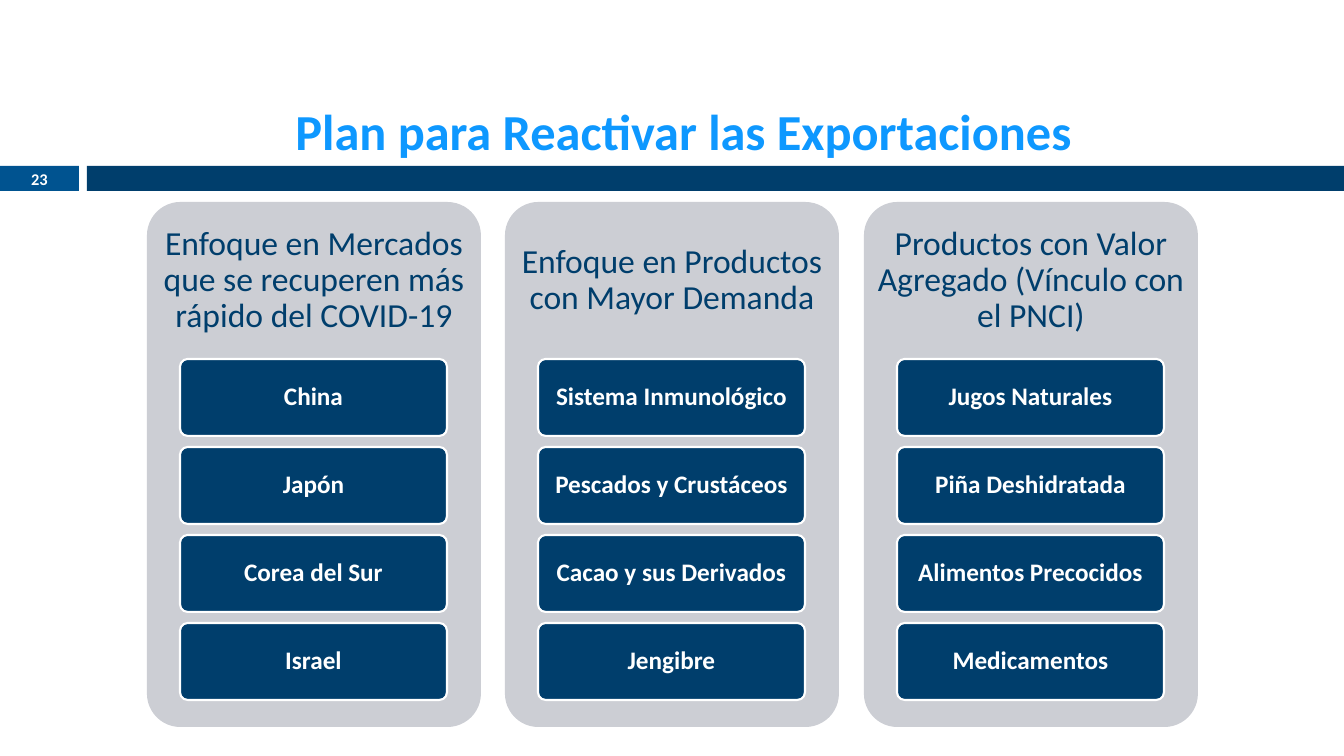
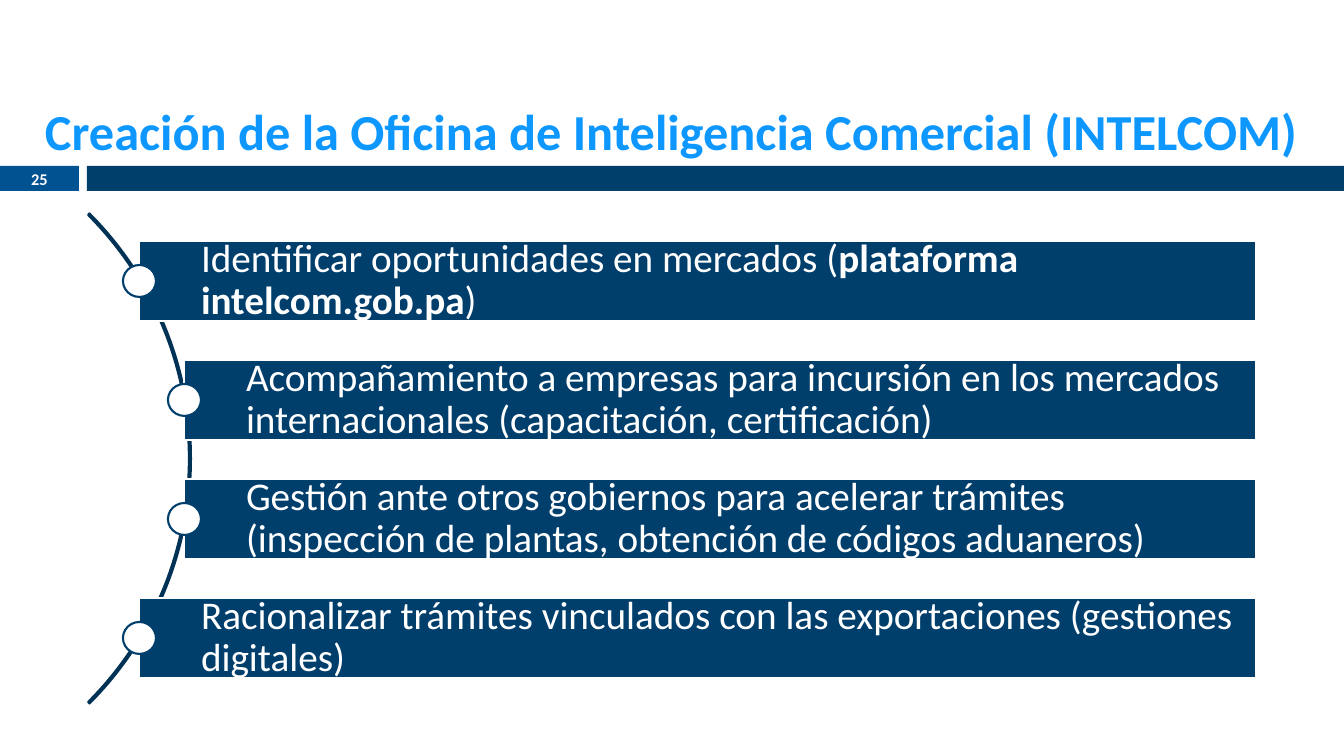
from dataclasses import dataclass

from pptx import Presentation
from pptx import util as u
from pptx.dml.color import RGBColor
from pptx.enum import shapes, text

WIDE, HIGH = 1344, 756
SCALE = 12192000 / WIDE
FONT = "Calibri"
HUES = {
    "title": "0E98FF",
    "navy": "003E6C",
    "blue": "005390",
    "arc": "003256",
    "card": "CCCED4",
    "white": "FFFFFF",
}
KIND = shapes.MSO_SHAPE
MID = text.MSO_ANCHOR.MIDDLE
LEFT, CENTER = text.PP_ALIGN.LEFT, text.PP_ALIGN.CENTER


@dataclass
class Box:
    x: int
    y: int
    w: int
    h: int

    def emu(self) -> list[u.Emu]:
        return [px(n) for n in (self.x, self.y, self.w, self.h)]


@dataclass
class Card:
    head: str
    items: list[str]


@dataclass
class Bar:
    left: int
    words: list[str]  # every second piece is bold


CARDS = [
    Card("Enfoque en Mercados que se recuperen más rápido del COVID-19",
         ["China", "Japón", "Corea del Sur", "Israel"]),
    Card("Enfoque en Productos con Mayor Demanda",
         ["Sistema Inmunológico", "Pescados y Crustáceos",
          "Cacao y sus Derivados", "Jengibre"]),
    Card("Productos con Valor Agregado (Vínculo con el PNCI)",
         ["Jugos Naturales", "Piña Deshidratada",
          "Alimentos Precocidos", "Medicamentos"]),
]
BARS = [
    Bar(139, ["Identificar oportunidades en mercados (",
              "plataforma intelcom.gob.pa", ")"]),
    Bar(184, ["Acompañamiento a empresas para incursión en los mercados "
              "internacionales (capacitación, certificación)"]),
    Bar(184, ["Gestión ante otros gobiernos para acelerar trámites "
              "(inspección de plantas, obtención de códigos aduaneros)"]),
    Bar(139, ["Racionalizar trámites vinculados con las exportaciones "
              "(gestiones digitales)"]),
]


def px(n: int) -> u.Emu:
    return u.Emu(round(n * SCALE))


def rgb(hue: str) -> RGBColor:
    return RGBColor.from_string(HUES[hue])


def shape(slide, kind, box: Box, fill: str = "", line: str = ""):
    item = slide.shapes.add_shape(kind, *box.emu())
    item.shadow.inherit = False
    if fill:
        item.fill.solid()
        item.fill.fore_color.rgb = rgb(fill)
    else:
        item.fill.background()
    if line:
        item.line.color.rgb = rgb(line)
        item.line.width = u.Pt(1.5)
    else:
        item.line.fill.background()
    return item


def write(item, words: list[str], size: float, hue: str, bold: bool = False,
          align=CENTER, anchor=MID, space: float = 1.0,
          pad: tuple[int, int, int, int] = (10, 5, 10, 5)) -> None:
    """Fill one paragraph; every second piece switches the weight."""
    frame = item.text_frame
    frame.word_wrap = True
    frame.vertical_anchor = anchor
    (frame.margin_left, frame.margin_top,
     frame.margin_right, frame.margin_bottom) = map(px, pad)
    para = frame.paragraphs[0]
    para.alignment = align
    para.line_spacing = space
    for i, word in enumerate(words):
        run = para.add_run()
        run.text = word
        run.font.name = FONT
        run.font.size = u.Pt(size)
        run.font.bold = bold != (i % 2 == 1)
        run.font.color.rgb = rgb(hue)


def start(deck, title: str, box: Box, number: int):
    """Add a slide with its bands, title and number."""
    slide = deck.slides.add_slide(deck.slide_layouts[6])
    tab = shape(slide, KIND.RECTANGLE, Box(0, 166, 79, 25), "blue")
    shape(slide, KIND.RECTANGLE, Box(87, 166, WIDE - 87, 25), "navy")
    write(tab, [str(number)], 11.7, "white", bold=True, pad=(0, 0, 0, 0))
    write(slide.shapes.add_textbox(*box.emu()), [title], 36, "title",
          bold=True, anchor=text.MSO_ANCHOR.BOTTOM)
    return slide


def draw_card(slide, card: Card, left: int) -> None:
    top, wide, head = 202, 334, 157
    back = shape(slide, KIND.ROUNDED_RECTANGLE,
                 Box(left, top, wide, 525), "card")
    back.adjustments[0] = 0.1
    label = slide.shapes.add_textbox(*Box(left, top, wide, head).emu())
    write(label, [card.head], 24, "navy", space=0.9, pad=(10, 10, 10, 10))
    for i, name in enumerate(card.items):
        box = Box(left + 33, top + head + 88 * i, wide - 67, 77)
        tile = shape(slide, KIND.ROUNDED_RECTANGLE, box, "navy", "white")
        tile.adjustments[0] = 0.1
        write(tile, [name], 18, "white", bold=True, space=0.9,
              pad=(5, 4, 5, 4))


def draw_bar(slide, bar: Bar, top: int) -> None:
    """Draw a bar with a dot centred on its left side."""
    high, wide, tall = 80, 33, 32
    box = Box(bar.left, top, 1256 - bar.left, high)
    strip = shape(slide, KIND.RECTANGLE, box, "navy", "white")
    write(strip, bar.words, 28, "white", align=LEFT, space=0.9,
          pad=(62, 8, 8, 8))
    dot = Box(bar.left - wide // 2, top + (high - tall) // 2, wide, tall)
    shape(slide, KIND.OVAL, dot, "white", "navy")


def main() -> None:
    deck = Presentation()
    deck.slide_width, deck.slide_height = px(WIDE), px(HIGH)

    plan = start(deck, "Plan para Reactivar las Exportaciones ",
                 Box(90, 90, 1199, 76), 23)
    for i, card in enumerate(CARDS):
        draw_card(plan, card, 147 + 717 * i // 2)

    office = start(
        deck, "Creación de la Oficina de Inteligencia Comercial (INTELCOM)",
        Box(4, 88, 1335, 78), 25)
    arc = shape(office, KIND.BLOCK_ARC, Box(-502, 112, 693, 693), line="arc")
    for i, value in enumerate((189, 27, 0.003)):
        arc.adjustments[i] = value
    for i, bar in enumerate(BARS):
        draw_bar(office, bar, 241 + 119 * i)

    deck.save("out.pptx")


if __name__ == "__main__":
    main()
